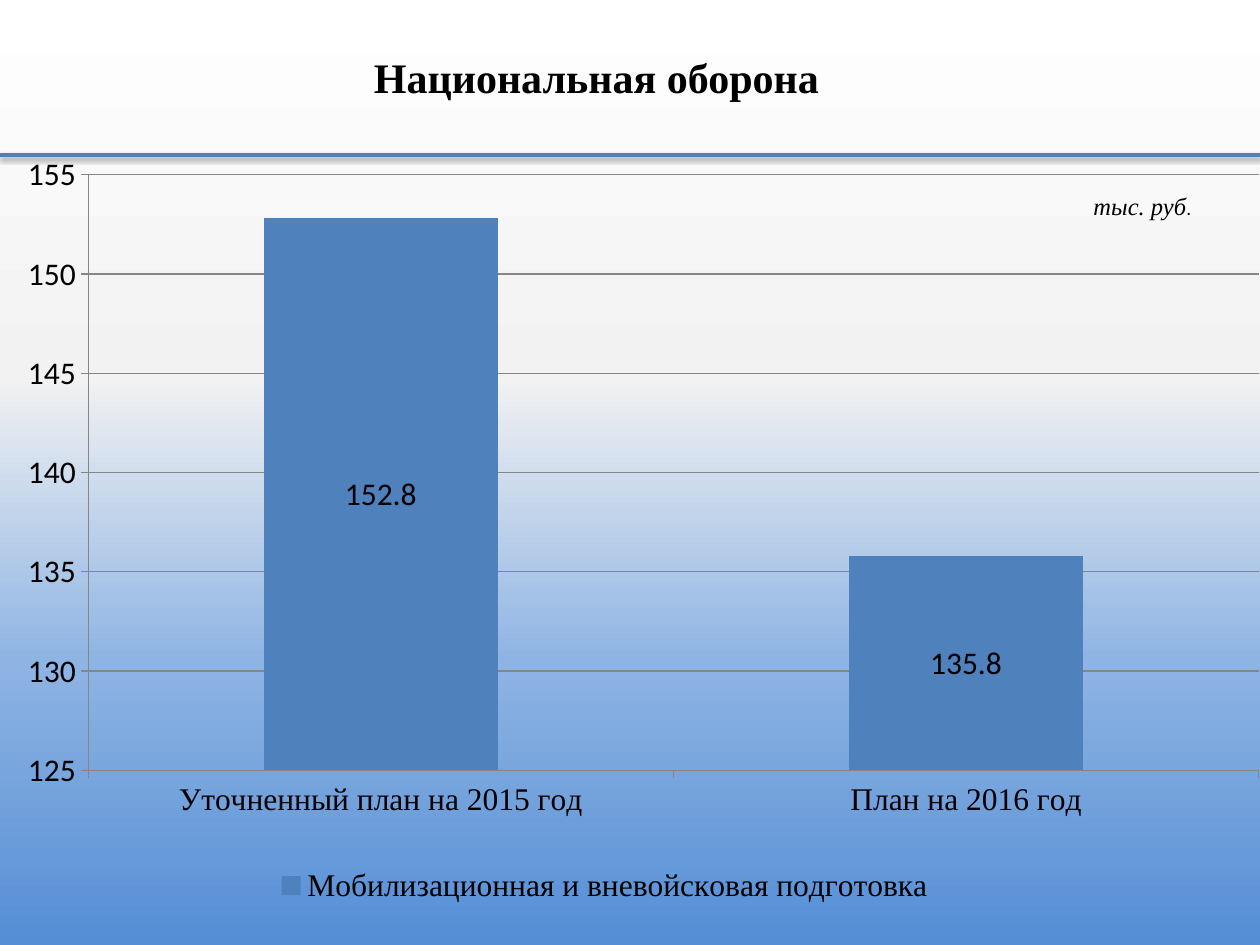
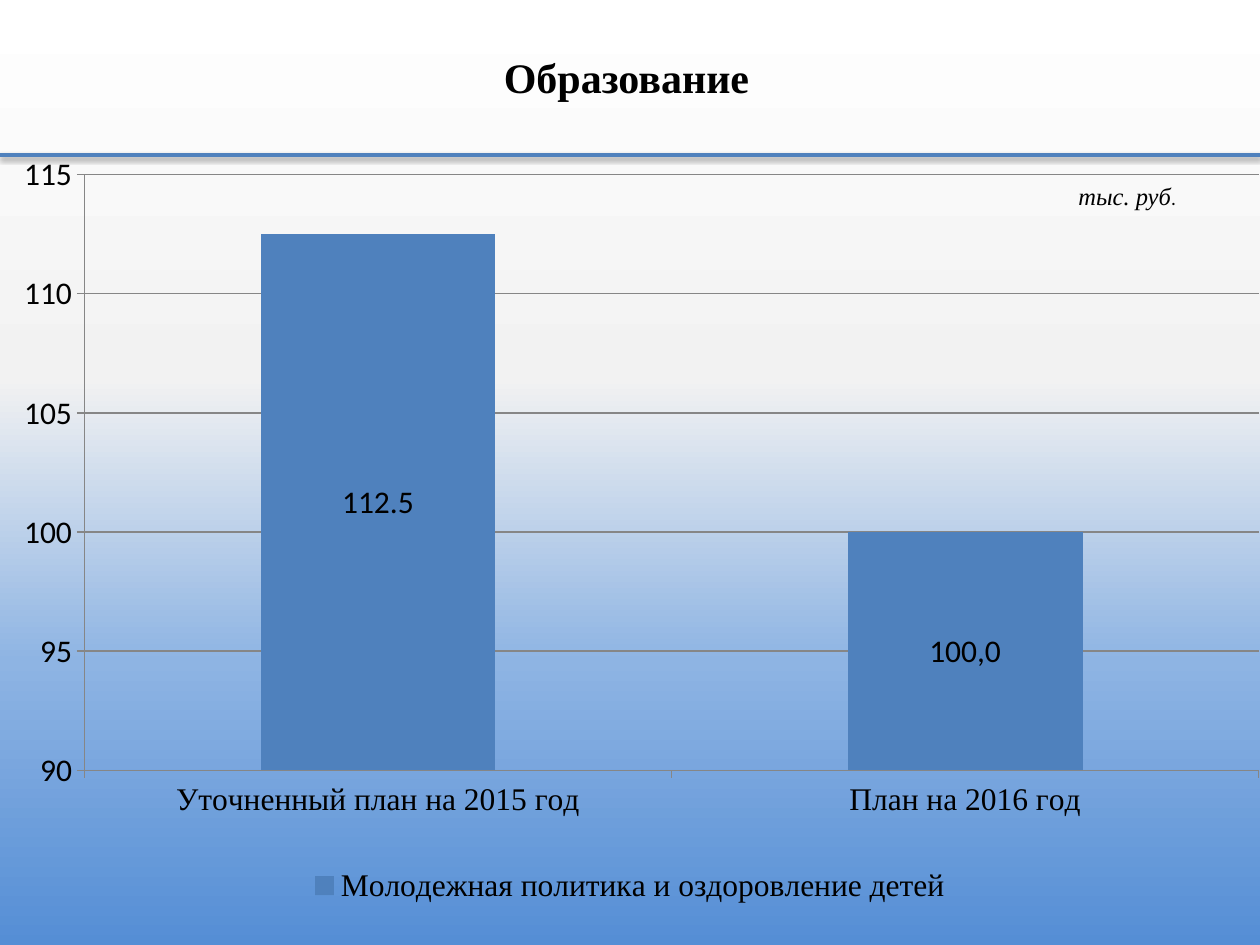
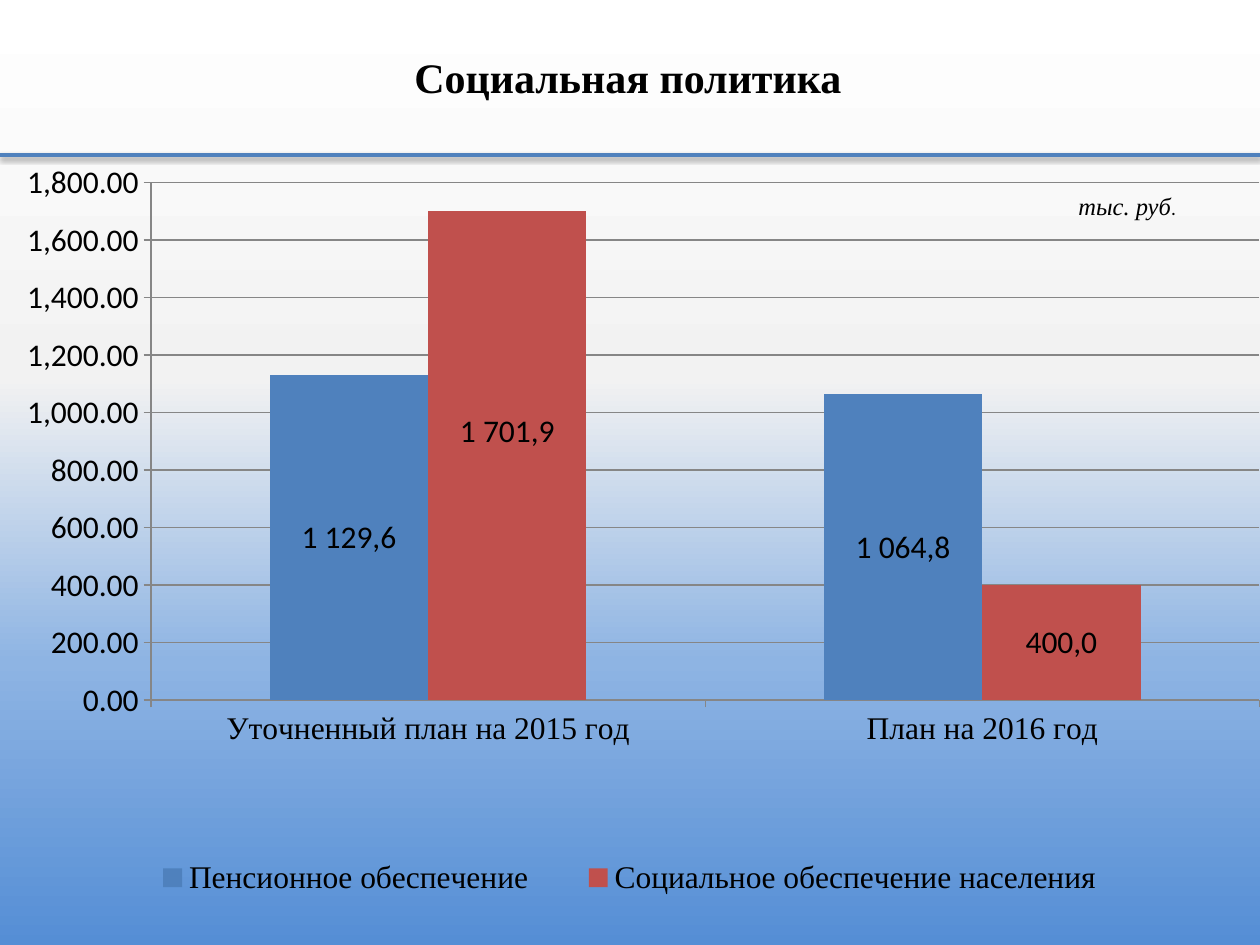
import lxml.etree
import pptx
import pptx.chart.data
import pptx.dml.color
import pptx.enum.chart
import pptx.enum.shapes
import pptx.enum.text
import pptx.oxml
import pptx.oxml.ns
import pptx.util

Inches = pptx.util.Inches
Pt = pptx.util.Pt
RGBColor = pptx.dml.color.RGBColor
Kind = pptx.enum.chart.XL_CHART_TYPE
qn = pptx.oxml.ns.qn

BLACK = RGBColor(0x00, 0x00, 0x00)
BLUE = RGBColor(0x4F, 0x81, 0xBD)
RED = RGBColor(0xC0, 0x50, 0x4D)
GRAY = RGBColor(0x86, 0x86, 0x86)
WHITE = RGBColor(0xFF, 0xFF, 0xFF)
PALE = RGBColor(0xF2, 0xF2, 0xF2)
SKY = RGBColor(0x8E, 0xB4, 0xE3)
DEEP = RGBColor(0x55, 0x8E, 0xD5)

STOPS = [(0, WHITE), (40, PALE), (70, SKY), (100, DEEP)]
SERIF = "Times New Roman"
SANS = "Calibri"
WIDTH, HEIGHT, RULE = 10, 7.5, 1.23
YEARS = ["Уточненный план на 2015 год", "План на 2016 год"]

PAGES = [
    dict(
        title="Национальная оборона", head=(2.87, 0.36, 3.86, 0.5),
        unit=(8.58, 1.47, 1.42, 0.39), kind=Kind.COLUMN_STACKED,
        scale=(125, 155, 5), form="General",
        plot=(0.07, 0.025, 0.929, 0.754), key=(0.2, 0.88, 0.56, 0.09),
        rows=[("Мобилизационная и вневойсковая подготовка", (152.8, 135.8), BLUE, {})],
        shifts={},
    ),
    dict(
        title="Образование", head=(3.9, 0.36, 2.15, 0.5),
        unit=(8.46, 1.39, 1.42, 0.39), kind=Kind.COLUMN_STACKED,
        scale=(90, 115, 5), form="General",
        plot=(0.067, 0.025, 0.932, 0.754), key=(0.22, 0.88, 0.56, 0.09),
        rows=[("Молодежная политика и оздоровление детей", (112.5, 100), BLUE,
               {1: "100,0"})],
        shifts={},
    ),
    dict(
        title="Социальная политика", head=(3.19, 0.36, 3.63, 0.5),
        unit=(8.46, 1.47, 1.42, 0.39), kind=Kind.COLUMN_CLUSTERED,
        scale=(0, 1800, 200), form="#,##0.00",
        plot=(0.12, 0.035, 0.88, 0.655), key=(0.09, 0.87, 0.82, 0.09),
        rows=[("Пенсионное обеспечение", (1129.6, 1064.8), BLUE,
               {0: "1 129,6", 1: "1 064,8"}),
              ("Социальное обеспечение населения", (1701.9, 400), RED,
               {0: "1 701,9", 1: "400,0"})],
        shifts={(1, 0): (0, -0.03)},
    ),
]


def style(font, face, size, color=BLACK, bold=False, slant=False):
    font.name = face
    font.size = Pt(size)
    font.color.rgb = color
    font.bold = bold
    font.italic = slant


def paint(master):
    fill = master.background.fill
    fill.gradient()
    fill.gradient_angle = 270
    stops = master.element.xpath(".//p:bg//a:gsLst")[0]
    for stop in list(stops):
        stops.remove(stop)
    for place, color in STOPS:
        stop = lxml.etree.SubElement(stops, qn("a:gs"), pos=str(place * 1000))
        lxml.etree.SubElement(stop, qn("a:srgbClr"), val=str(color))


def add_rule(slide):
    line = slide.shapes.add_connector(
        pptx.enum.shapes.MSO_CONNECTOR.STRAIGHT,
        Inches(WIDTH), Inches(RULE), Inches(0), Inches(RULE))
    line.line.color.rgb = BLUE
    line.line.width = Pt(2)
    props = line.element.xpath("./p:spPr")[0]
    effects = lxml.etree.SubElement(props, qn("a:effectLst"))
    shade = lxml.etree.SubElement(
        effects, qn("a:outerShdw"), blurRad=str(Pt(3.1)), dist=str(Pt(1.6)),
        dir="5400000", rotWithShape="0")
    color = lxml.etree.SubElement(shade, qn("a:srgbClr"), val=str(BLACK))
    lxml.etree.SubElement(color, qn("a:alpha"), val="38000")


def add_title(slide, box, text):
    frame = slide.shapes.add_textbox(*map(Inches, box)).text_frame
    frame.text = text
    frame.word_wrap = False
    frame.auto_size = pptx.enum.text.MSO_AUTO_SIZE.SHAPE_TO_FIT_TEXT
    style(frame.paragraphs[0].runs[0].font, SERIF, 24, bold=True)


def add_unit(slide, box):
    frame = slide.shapes.add_textbox(*map(Inches, box)).text_frame
    frame.word_wrap = True
    frame.text = "тыс. руб"
    first = frame.paragraphs[0]
    style(first.runs[0].font, SERIF, 14, slant=True)
    dot = first.add_run()
    dot.text = "."
    style(dot.font, SANS, 11)


def lay_out(parent, index, box, modes=(), target=None):
    for old in parent.findall(qn("c:layout")):
        parent.remove(old)
    layout = lxml.etree.Element(qn("c:layout"))
    manual = lxml.etree.SubElement(layout, qn("c:manualLayout"))
    if target:
        lxml.etree.SubElement(manual, qn("c:layoutTarget"), val=target)
    for mode in modes:
        lxml.etree.SubElement(manual, qn("c:" + mode), val="edge")
    for name, value in zip("xywh", box):
        lxml.etree.SubElement(manual, qn("c:" + name), val=str(value))
    parent.insert(index, layout)


def set_axis(axis, face):
    style(axis.tick_labels.font, face, 18)
    axis.major_tick_mark = pptx.enum.chart.XL_TICK_MARK.OUTSIDE
    axis.minor_tick_mark = pptx.enum.chart.XL_TICK_MARK.NONE
    set_line(axis.format.line)


def set_line(line):
    line.color.rgb = GRAY
    line.width = Pt(0.75)


def set_scale(axis, scale, form):
    axis.minimum_scale, axis.maximum_scale, axis.major_unit = scale
    axis.has_major_gridlines = True
    set_line(axis.major_gridlines.format.line)
    axis.tick_labels.number_format = form
    axis.tick_labels.number_format_is_linked = False


def set_bars(bars, color, notes):
    bars.format.fill.solid()
    bars.format.fill.fore_color.rgb = color
    center = pptx.enum.chart.XL_LABEL_POSITION.CENTER
    labels = bars.data_labels
    labels.show_value = True
    labels.position = center
    style(labels.font, SANS, 18)
    for index, text in notes.items():
        label = bars.points[index].data_label
        label.text_frame.text = text
        style(label.text_frame.paragraphs[0].runs[0].font, SANS, 18)
        label.position = center


def add_graph(slide, box, page):
    data = pptx.chart.data.CategoryChartData()
    data.categories = YEARS
    for name, values, color, notes in page["rows"]:
        data.add_series(name, values)
    chart = slide.shapes.add_chart(page["kind"], *map(Inches, box), data).chart
    style(chart.font, SANS, 18)
    chart.has_title = False
    set_axis(chart.category_axis, SERIF)
    set_axis(chart.value_axis, SANS)
    set_scale(chart.value_axis, page["scale"], page["form"])

    plot = chart.plots[0]
    plot.vary_by_categories = False
    plot.gap_width = 150
    plot.overlap = 100 if page["kind"] == Kind.COLUMN_STACKED else 0
    for bars, (name, values, color, notes) in zip(plot.series, page["rows"]):
        set_bars(bars, color, notes)

    chart.has_legend = True
    chart.legend.position = pptx.enum.chart.XL_LEGEND_POSITION.RIGHT
    chart.legend.include_in_layout = False
    style(chart.legend.font, SERIF, 18)

    root = chart.element
    edges = ("xMode", "yMode")
    lay_out(root.xpath(".//c:plotArea")[0], 0, page["plot"], edges, "inner")
    lay_out(root.xpath(".//c:legend")[0], 1, page["key"], edges)
    for (row, point), shift in page["shifts"].items():
        label = root.xpath(".//c:ser")[row].xpath(".//c:dLbl")[point]
        lay_out(label, 1, shift)


def add_page(deck, page):
    slide = deck.slides.add_slide(deck.slide_layouts[6])
    add_rule(slide)
    add_title(slide, page["head"], page["title"])
    add_graph(slide, (0, RULE, WIDTH, HEIGHT - RULE), page)
    add_unit(slide, page["unit"])


def main():
    deck = pptx.Presentation()
    deck.slide_width = Inches(WIDTH)
    deck.slide_height = Inches(HEIGHT)
    paint(deck.slide_master)
    for page in PAGES:
        add_page(deck, page)
    deck.save("out.pptx")


if __name__ == "__main__":
    main()
